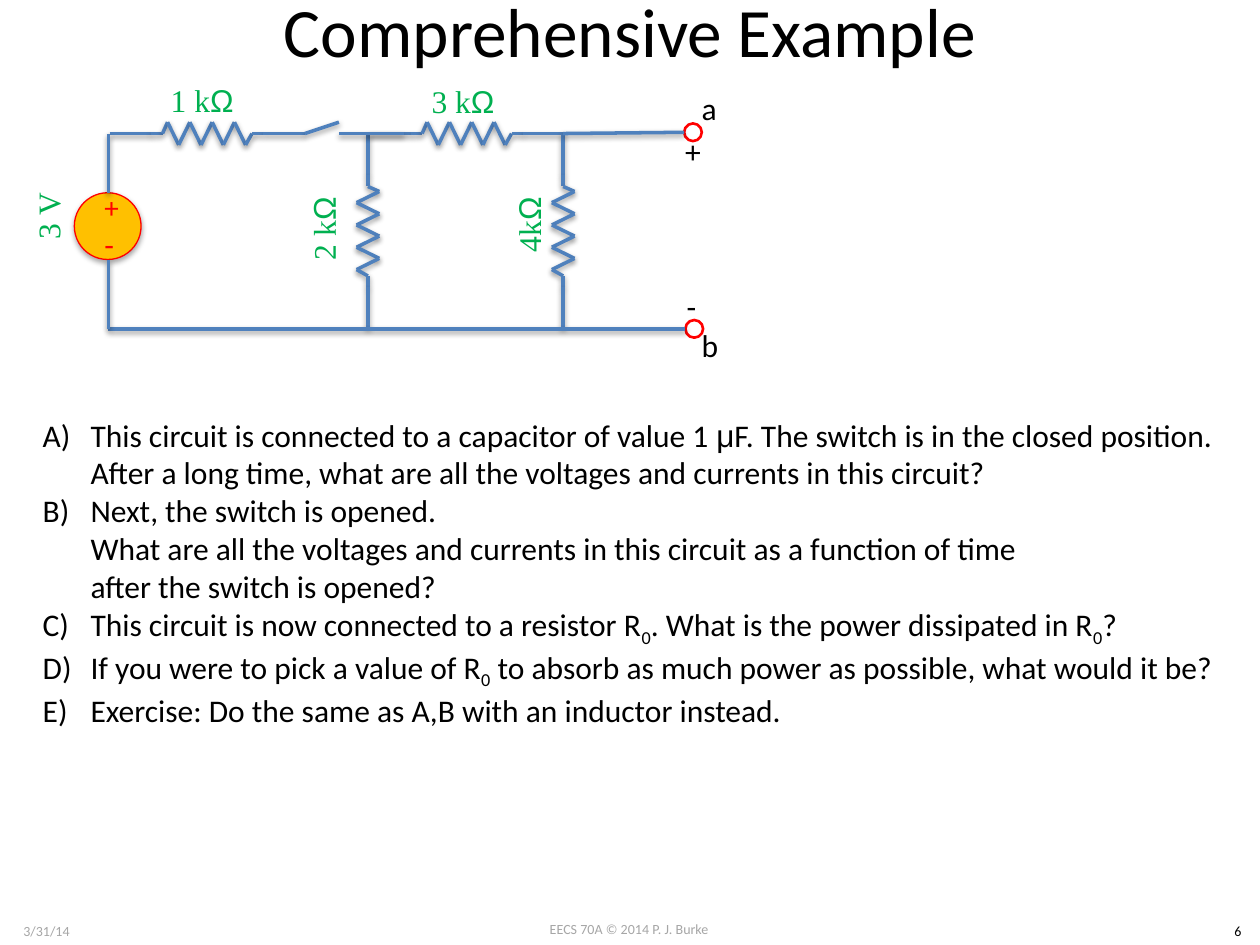
from dataclasses import dataclass
from itertools import pairwise

from lxml.etree import SubElement
from pptx import Presentation
from pptx.dml.color import RGBColor
from pptx.enum.shapes import MSO_CONNECTOR, MSO_SHAPE
from pptx.enum.text import MSO_ANCHOR, MSO_AUTO_SIZE, PP_ALIGN
from pptx.oxml.ns import qn
from pptx.util import Inches, Pt

BLACK = RGBColor(0x00, 0x00, 0x00)
GRAY = RGBColor(0xA6, 0xA6, 0xA6)
WIRE_BLUE = RGBColor(0x4F, 0x81, 0xBD)
RED = RGBColor(0xFF, 0x00, 0x00)
AMBER = RGBColor(0xFF, 0xC0, 0x00)
GREEN = RGBColor(0x00, 0xB0, 0x50)

TOP, BOTTOM = 1.06, 2.61
SOURCE_X = 0.86
PEAKS, PEAK_STEP, PEAK_HEIGHT = 8, 0.0885, 0.09


@dataclass
class Label:
    """Text in a box; each run is its wording and font."""
    runs: list[tuple[str, str]]
    left: float
    top: float
    width: float
    height: float
    size: float = 18
    color: RGBColor = BLACK
    rotation: int = 0
    centered: bool = True
    middle: bool = True
    wrap: bool = True


@dataclass
class Resistor:
    x: float
    y: float
    vertical: bool
    value: Label


def value_label(number: str, left: float, top: float, rotation: int = 0) -> Label:
    runs = [(number, "Times New Roman"), ("Ω", "Arial")]
    return Label(runs, left, top, 1.19, 0.73, color=GREEN, rotation=rotation)


def terminal_label(text: str, left: float, top: float, width: float) -> Label:
    return Label([(text, "Calibri")], left, top, width, 0.4,
                 centered=False, middle=False, wrap=False)


def footer_label(text: str, left: float, top: float, width: float, color: RGBColor) -> Label:
    return Label([(text, "Calibri")], left, top, width, 0.24, 8, color, middle=False)


RESISTORS = [
    Resistor(2.92, TOP, True, value_label("2 k", 1.97, 1.45, 270)),
    Resistor(2.93, TOP, False, value_label("3 k", 3.08, 0.44)),
    Resistor(4.47, TOP, True, value_label("4k", 3.6, 1.42, 270)),
    Resistor(0.87, TOP, False, value_label("1 k", 1.01, 0.43)),
]
WIRES = [
    ((4.47, TOP), (5.43, 1.05)),
    ((SOURCE_X, BOTTOM), (5.44, BOTTOM)),
    ((2.69, TOP), (3.21, TOP)),
    ((2.42, TOP), (2.69, 0.97)),
]
SOURCE_WIRES = [
    ((SOURCE_X, BOTTOM), (SOURCE_X, 2.06)),
    ((SOURCE_X, 1.53), (SOURCE_X, TOP)),
]
TERMINALS = [(5.43, 0.98), (5.44, 2.54)]
TERMINAL_LABELS = [
    terminal_label("a", 5.47, 0.66, 0.32),
    terminal_label("b", 5.47, 2.54, 0.34),
    terminal_label("+", 5.34, 1.0, 0.33),
    terminal_label("-", 5.35, 2.23, 0.28),
]
SOURCE_LABELS = [
    Label([("+", "Calibri")], 0.73, 1.48, 0.26, 0.33, 16.6, RED),
    Label([("-", "Calibri")], 0.73, 1.77, 0.26, 0.33, 18, RED),
    Label([("3 V", "Times New Roman")], -0.27, 1.33, 1.3, 0.77, color=GREEN, rotation=270),
]
FOOTERS = [
    footer_label("EECS 70A © 2014 P. J. Burke", 3.83, 7.26, 2.33, GRAY),
    footer_label("3/31/14", 0, 7.27, 0.74, GRAY),
    footer_label("6", 9.65, 7.27, 0.35, BLACK),
]
# Underscore pieces mark subscripts, line ends mark breaks within a question.
QUESTIONS = [
    ["This circuit is connected to a capacitor of value 1 ", "μ",
     "F. The switch is in the closed position.\n"
     "After a long time, what are all the voltages and currents in this circuit?"],
    ["Next, the switch is opened. \n"
     "What are all the voltages and currents in this circuit as a function of time \n"
     "after the switch is opened?"],
    ["This circuit is now connected to a resistor R", "_0",
     ". What is the power dissipated in R", "_0", "?"],
    ["If you were to pick a value of R", "_0",
     " to absorb as much power as possible, what would it be?"],
    ["Exercise: Do the same as A,B with an inductor instead."],
]


def add_run(paragraph, text: str, font: str, size: float, color: RGBColor):
    run = paragraph.add_run()
    run.text = text
    run.font.name = font
    run.font.size = Pt(size)
    run.font.color.rgb = color
    return run


def add_shadow(shape, opacity: int, distance: int) -> None:
    effects = SubElement(shape._element.spPr, qn("a:effectLst"))
    shadow = SubElement(effects, qn("a:outerShdw"), blurRad="40000",
                        dist=str(distance), dir="5400000", rotWithShape="0")
    black = SubElement(shadow, qn("a:srgbClr"), val="000000")
    SubElement(black, qn("a:alpha"), val=str(opacity * 1000))


def add_wire(shapes, start: tuple[float, float], end: tuple[float, float]) -> None:
    wire = shapes.add_connector(MSO_CONNECTOR.STRAIGHT, *map(Inches, start + end))
    wire.line.color.rgb = WIRE_BLUE
    wire.line.width = Pt(2)
    add_shadow(wire, 38, 20000)


def add_circle(shapes, left: float, top: float, size: float, line_width: float):
    circle = shapes.add_shape(MSO_SHAPE.OVAL, *map(Inches, (left, top, size, size)))
    circle.shadow.inherit = False
    circle.fill.background()
    circle.line.color.rgb = RED
    circle.line.width = Pt(line_width)
    return circle


def add_label(shapes, label: Label) -> None:
    box = shapes.add_textbox(*map(Inches, (label.left, label.top, label.width, label.height)))
    box.rotation = label.rotation
    frame = box.text_frame
    frame.word_wrap = label.wrap
    frame.vertical_anchor = MSO_ANCHOR.MIDDLE if label.middle else MSO_ANCHOR.TOP
    paragraph = frame.paragraphs[0]
    paragraph.alignment = PP_ALIGN.CENTER if label.centered else PP_ALIGN.LEFT
    for text, font in label.runs:
        add_run(paragraph, text, font, label.size, label.color)


def add_resistor(shapes, resistor: Resistor) -> None:
    """Draw leads and zigzag from (distance along, offset across) points."""
    side = 1 if resistor.vertical else -1
    peaks = [(0.46 + i * PEAK_STEP, side * (-1) ** i * PEAK_HEIGHT) for i in range(PEAKS)]
    points = [(0, 0), (0.33, 0), (0.42, 0), *peaks, (1.13, 0), (1.22, 0), (1.55, 0)]
    if resistor.vertical:
        points = [(across, along) for along, across in points]
    placed = [(resistor.x + dx, resistor.y + dy) for dx, dy in points]
    group = shapes.add_group_shape()
    for start, end in pairwise(placed):
        add_wire(group.shapes, start, end)


def add_source(shapes) -> None:
    group = shapes.add_group_shape()
    circle = add_circle(group.shapes, 0.59, 1.53, 0.53, 0.75)
    circle.fill.solid()
    circle.fill.fore_color.rgb = AMBER
    circle._element.spPr.remove(circle._element.spPr.find(qn("a:effectLst")))
    add_shadow(circle, 35, 23000)
    for start, end in SOURCE_WIRES:
        add_wire(group.shapes, start, end)
    for label in SOURCE_LABELS:
        add_label(group.shapes, label)


def add_questions(shapes) -> None:
    frame = shapes.add_textbox(*map(Inches, (0.24, 3.25, 9.61, 3.43))).text_frame
    frame.word_wrap = False
    for number, pieces in enumerate(QUESTIONS):
        paragraph = frame.add_paragraph() if number else frame.paragraphs[0]
        properties = paragraph._p.get_or_add_pPr()
        properties.set("marL", str(Inches(0.38)))
        properties.set("indent", str(Inches(-0.38)))
        SubElement(properties, qn("a:buFont"), typeface="+mj-lt")
        SubElement(properties, qn("a:buAutoNum"), type="alphaUcParenR")
        for piece in pieces:
            font = "Arial" if piece == "μ" else "Calibri"
            for row, text in enumerate(piece.split("\n")):
                if row:
                    paragraph.add_line_break()
                run = add_run(paragraph, text.removeprefix("_"), font, 18, BLACK)
                if text.startswith("_"):
                    run.font._element.set("baseline", "-25000")


def main() -> None:
    deck = Presentation()
    deck.slide_width, deck.slide_height = Inches(10), Inches(7.5)
    slide = deck.slides.add_slide(deck.slide_layouts[5])
    shapes = slide.shapes

    title = shapes.title
    title.left, title.top, title.width, title.height = map(Inches, (0.5, -0.17, 9, 0.82))
    title.text_frame.auto_size = MSO_AUTO_SIZE.NONE
    title.text_frame.vertical_anchor = MSO_ANCHOR.MIDDLE
    heading = title.text_frame.paragraphs[0]
    heading.alignment = PP_ALIGN.CENTER
    add_run(heading, "Comprehensive Example", "Calibri", 39.6, BLACK)

    for resistor in RESISTORS:
        add_resistor(shapes, resistor)
    for left, top in TERMINALS:
        add_circle(shapes, left, top, 0.14, 1.5)
    for start, end in WIRES:
        add_wire(shapes, start, end)
    add_source(shapes)
    add_questions(shapes)
    for label in [r.value for r in RESISTORS] + TERMINAL_LABELS + FOOTERS:
        add_label(shapes, label)
    deck.save("out.pptx")


if __name__ == "__main__":
    main()
